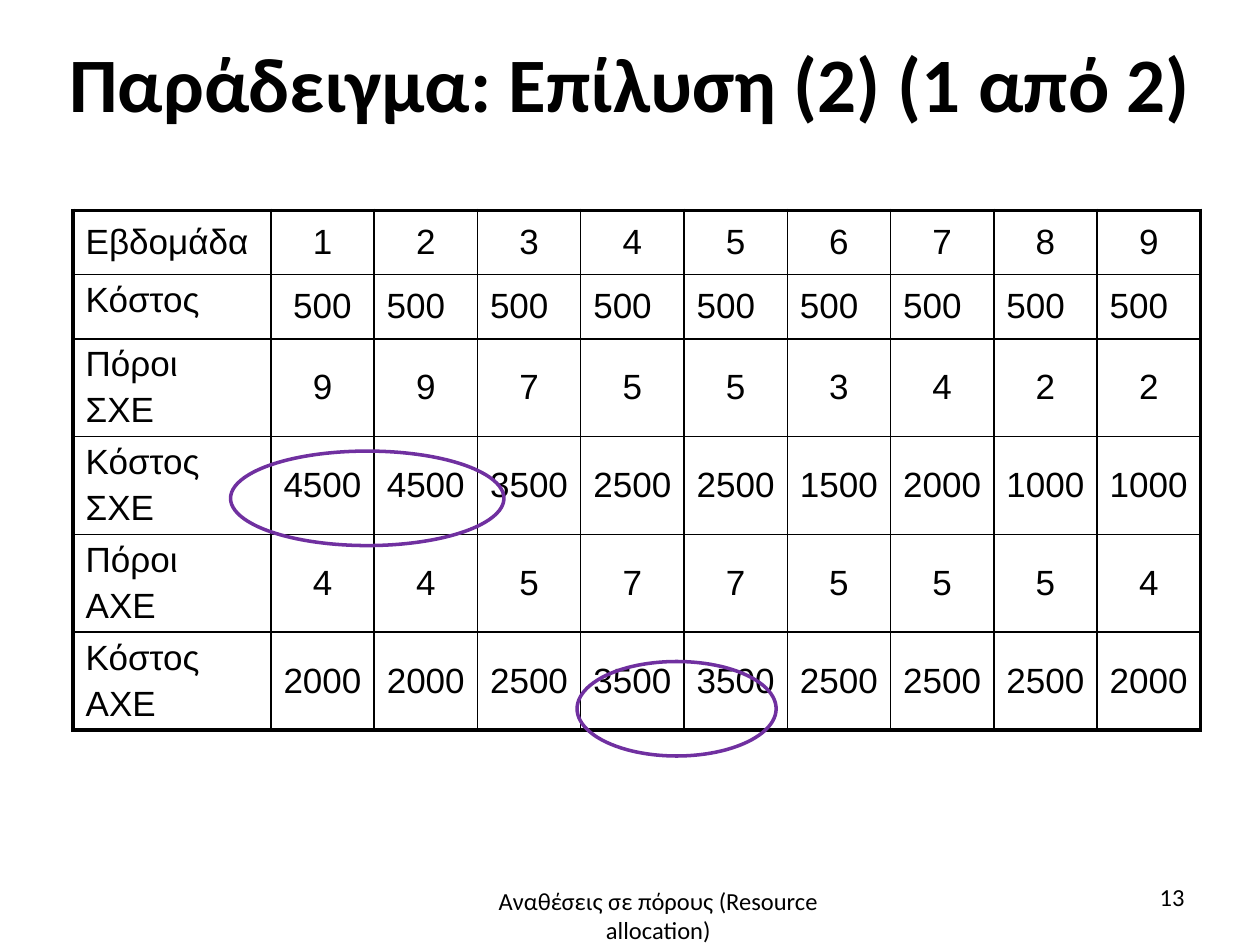
"""Build the resource cost table slide."""
from lxml.etree import SubElement
from pptx import Presentation
from pptx.dml.color import RGBColor
from pptx.enum.shapes import MSO_SHAPE
from pptx.enum.text import MSO_ANCHOR, PP_ALIGN
from pptx.oxml.ns import qn
from pptx.util import Inches, Pt

COLORS = {"black": "000000", "purple": "7030A0"}
TITLE = "Παράδειγμα: Επίλυση (2) (1 από 2)"
ROWS = [
    ("Εβδομάδα", range(1, 10)),
    ("Κόστος", [500] * 9),
    ("Πόροι\nΣΧΕ", [9, 9, 7, 5, 5, 3, 4, 2, 2]),
    ("Κόστος\nΣΧΕ", [4500, 4500, 3500, 2500, 2500, 1500, 2000, 1000, 1000]),
    ("Πόροι\nΑΧΕ", [4, 4, 5, 7, 7, 5, 5, 5, 4]),
    ("Κόστος\nΑΧΕ", [2000, 2000, 2500, 3500, 3500, 2500, 2500, 2500, 2000]),
]
ELLIPSES = [(4.58, 5.25, 1.58, 0.75), (1.83, 3.58, 2.17, 0.75)]
FOOTERS = [
    ("Αναθέσεις σε πόρους (Resource allocation)", (3.48, 6.98, 3.49, 0.55), PP_ALIGN.CENTER),
    ("13", (7.17, 6.95, 2.33, 0.4), PP_ALIGN.RIGHT),
]
LABEL_W, WEEK_W = 1.57, 0.82
ROW_H, TALL_ROW_H = 0.51, 0.77
THIN, THICK = 1, 2.25


def box(values):
    return [Inches(v) for v in values]


def style(p, name, size, align, bold=False):
    p.alignment = align
    p.font.name, p.font.size, p.font.bold = name, Pt(size), bold
    p.font.color.rgb = RGBColor.from_string(COLORS["black"])


def set_borders(cell, widths):
    tcPr = cell._tc.get_or_add_tcPr()
    for side, width in zip("LRTB", widths):
        ln = SubElement(tcPr, qn(f"a:ln{side}"), w=str(Pt(width)))
        fill = SubElement(ln, qn("a:solidFill"))
        SubElement(fill, qn("a:srgbClr"), val=COLORS["black"])


def add_title(s):
    title = s.shapes.title
    title.left, title.top, title.width, title.height = box((0.51, 0.04, 8.99, 1.19))
    tf = title.text_frame
    tf.text = TITLE
    tf.word_wrap = True
    tf.vertical_anchor = MSO_ANCHOR.MIDDLE
    tf.margin_left = tf.margin_right = tf.margin_bottom = 0
    tf.margin_top = Inches(0.02)
    style(tf.paragraphs[0], "Calibri", 44, PP_ALIGN.CENTER, True)


def add_cost_table(s):
    last_row, last_col = len(ROWS) - 1, len(ROWS[0][1])
    heights = [TALL_ROW_H if "\n" in label else ROW_H for label, _ in ROWS]
    at = box((0.58, 1.67, LABEL_W + WEEK_W * last_col, sum(heights)))
    table = s.shapes.add_table(last_row + 1, last_col + 1, *at).table
    table.first_row = table.horz_banding = False
    for c, col in enumerate(table.columns):
        col.width = Inches(WEEK_W if c else LABEL_W)
    for r, (label, values) in enumerate(ROWS):
        table.rows[r].height = Inches(heights[r])
        for c, value in enumerate([label, *values]):
            cell = table.cell(r, c)
            cell.text = str(value)
            cell.vertical_anchor = MSO_ANCHOR.TOP if r and not c else MSO_ANCHOR.MIDDLE
            left = c == 0 or (r == 1 and c > 1)
            for i, p in enumerate(cell.text_frame.paragraphs):
                style(p, "Arial", 20, PP_ALIGN.LEFT if left else PP_ALIGN.CENTER)
                if i:
                    p.space_before = Pt(4)
            outer = (c == 0, c == last_col, r == 0, r == last_row)
            set_borders(cell, [THICK if edge else THIN for edge in outer])
            cell.fill.background()


def add_ellipse(s, at):
    sp = s.shapes.add_shape(MSO_SHAPE.OVAL, *box(at))
    sp.shadow.inherit = False
    sp.fill.background()
    sp.line.color.rgb = RGBColor.from_string(COLORS["purple"])
    sp.line.width = Pt(2)


def add_footer(s, text, at, align):
    tf = s.shapes.add_textbox(*box(at)).text_frame
    tf.word_wrap = True
    tf.text = text
    style(tf.paragraphs[0], "Calibri", 14, align)


def main():
    prs = Presentation()
    prs.slide_width, prs.slide_height = Inches(10), Inches(7.5)
    s = prs.slides.add_slide(prs.slide_layouts[5])
    add_title(s)
    add_cost_table(s)
    for at in ELLIPSES:
        add_ellipse(s, at)
    for footer in FOOTERS:
        add_footer(s, *footer)
    prs.save("out.pptx")


if __name__ == "__main__":
    main()
